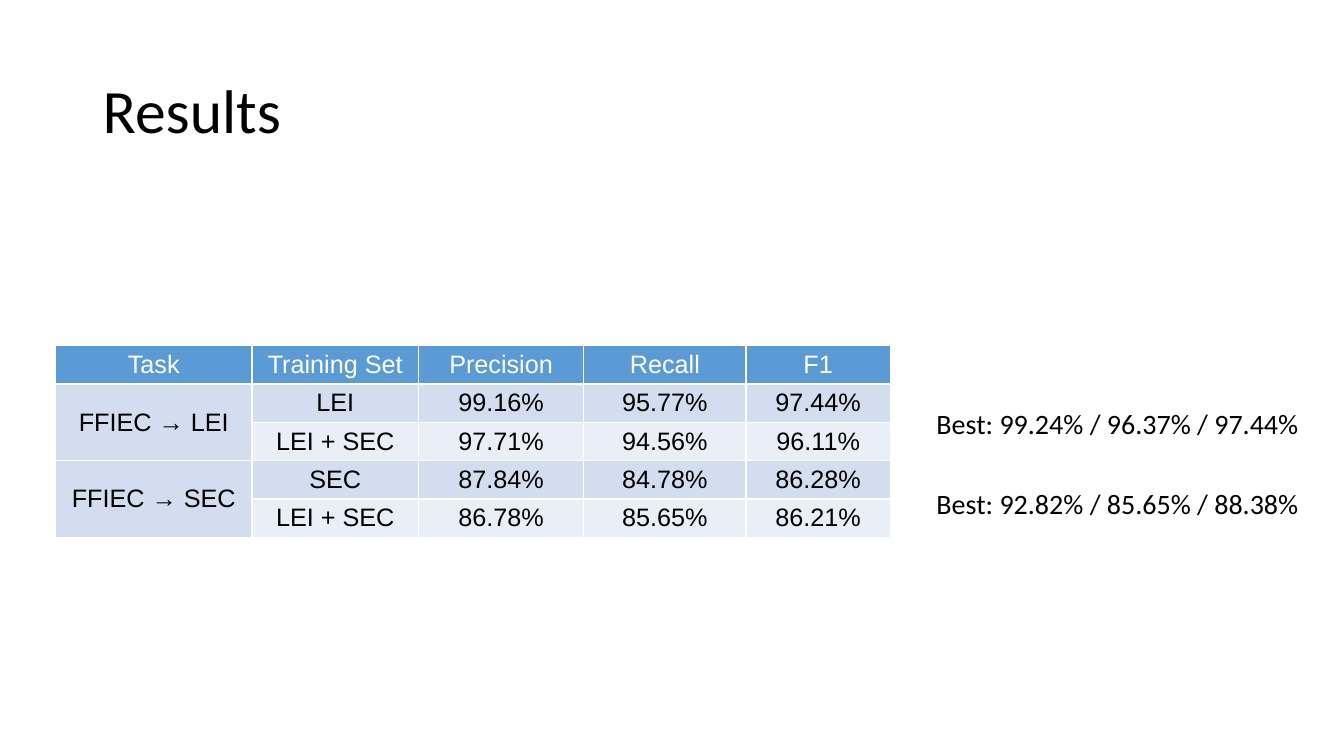
from lxml import etree
from pptx import Presentation
from pptx import util as u
from pptx.dml.color import RGBColor
from pptx.enum import text
from pptx.oxml import ns

COLORS = {"black": "000000", "white": "FFFFFF", "header": "5B9BD5",
          "band_dark": "D2DEEF", "band_light": "EAEFF7"}


def write_text(paragraph, content, color, formats):
    run = paragraph.add_run()
    run.text = content
    for name, value in formats.items():
        setattr(run.font, name, value)
    run.font.color.rgb = RGBColor.from_string(COLORS[color])


def add_border(cell, side):
    properties = cell._tc.get_or_add_tcPr()
    line = etree.SubElement(properties, ns.qn(f"a:{side}"), w=str(u.Pt(1)))
    fill = etree.SubElement(line, ns.qn("a:solidFill"))
    etree.SubElement(fill, ns.qn("a:srgbClr"), val=COLORS["white"])


presentation = Presentation()
presentation.slide_width = u.Inches(13.33)
presentation.slide_height = u.Inches(7.5)
slide = presentation.slides.add_slide(presentation.slide_layouts[6])

text_boxes = [
    ("Results", (0.92, 0.4, 11.5, 1.45), 44, 0.9),
    ("Best: 99.24% / 96.37% / 97.44%", (9.19, 3.98, 3.93, 0.44), 20, 1),
    ("Best: 92.82% / 85.65% / 88.38%", (9.19, 4.77, 3.93, 0.44), 20, 1),
]
for content, place, size, spacing in text_boxes:
    frame = slide.shapes.add_textbox(*map(u.Inches, place)).text_frame
    frame.word_wrap = True
    frame.vertical_anchor = text.MSO_ANCHOR.MIDDLE
    paragraph = frame.paragraphs[0]
    paragraph.line_spacing = spacing
    write_text(paragraph, content, "black", {"name": "Calibri", "size": u.Pt(size)})

results = [
    ("Task", "Training Set", "Precision", "Recall", "F1"),
    ("FFIEC → LEI", "LEI", "99.16%", "95.77%", "97.44%"),
    ("", "LEI + SEC", "97.71%", "94.56%", "96.11%"),
    ("FFIEC → SEC", "SEC", "87.84%", "84.78%", "86.28%"),
    ("", "LEI + SEC", "86.78%", "85.65%", "86.21%"),
]
column_widths = [1.95, 1.65, 1.64, 1.61, 1.43]
row_height = 0.38
table = slide.shapes.add_table(
    len(results), len(column_widths), u.Inches(0.55), u.Inches(3.43),
    u.Inches(sum(column_widths)), u.Inches(row_height * len(results))).table
for column, width in zip(table.columns, column_widths):
    column.width = u.Inches(width)

cell_format = {"vertical_anchor": text.MSO_ANCHOR.MIDDLE,
               "margin_top": u.Inches(0.04), "margin_bottom": u.Inches(0.04),
               "margin_left": u.Inches(0.1), "margin_right": u.Inches(0.1)}
table_font = {"name": "Arial", "size": u.Pt(18), "bold": False}
for row_index, values in enumerate(results):
    table.rows[row_index].height = u.Inches(row_height)
    for column_index, value in enumerate(values):
        cell = table.cell(row_index, column_index)
        for name, setting in cell_format.items():
            setattr(cell, name, setting)
        for side in ("lnL", "lnR", "lnT", "lnB"):
            add_border(cell, side)
        if row_index == 0:
            band = "header"
        elif column_index == 0 or row_index % 2:
            band = "band_dark"
        else:
            band = "band_light"
        cell.fill.solid()
        cell.fill.fore_color.rgb = RGBColor.from_string(COLORS[band])
        if value:
            paragraph = cell.text_frame.paragraphs[0]
            paragraph.alignment = text.PP_ALIGN.CENTER
            write_text(paragraph, value, "black" if row_index else "white", table_font)

for first_row in (1, 3):
    table.cell(first_row, 0).merge(table.cell(first_row + 1, 0))

presentation.save("out.pptx")
